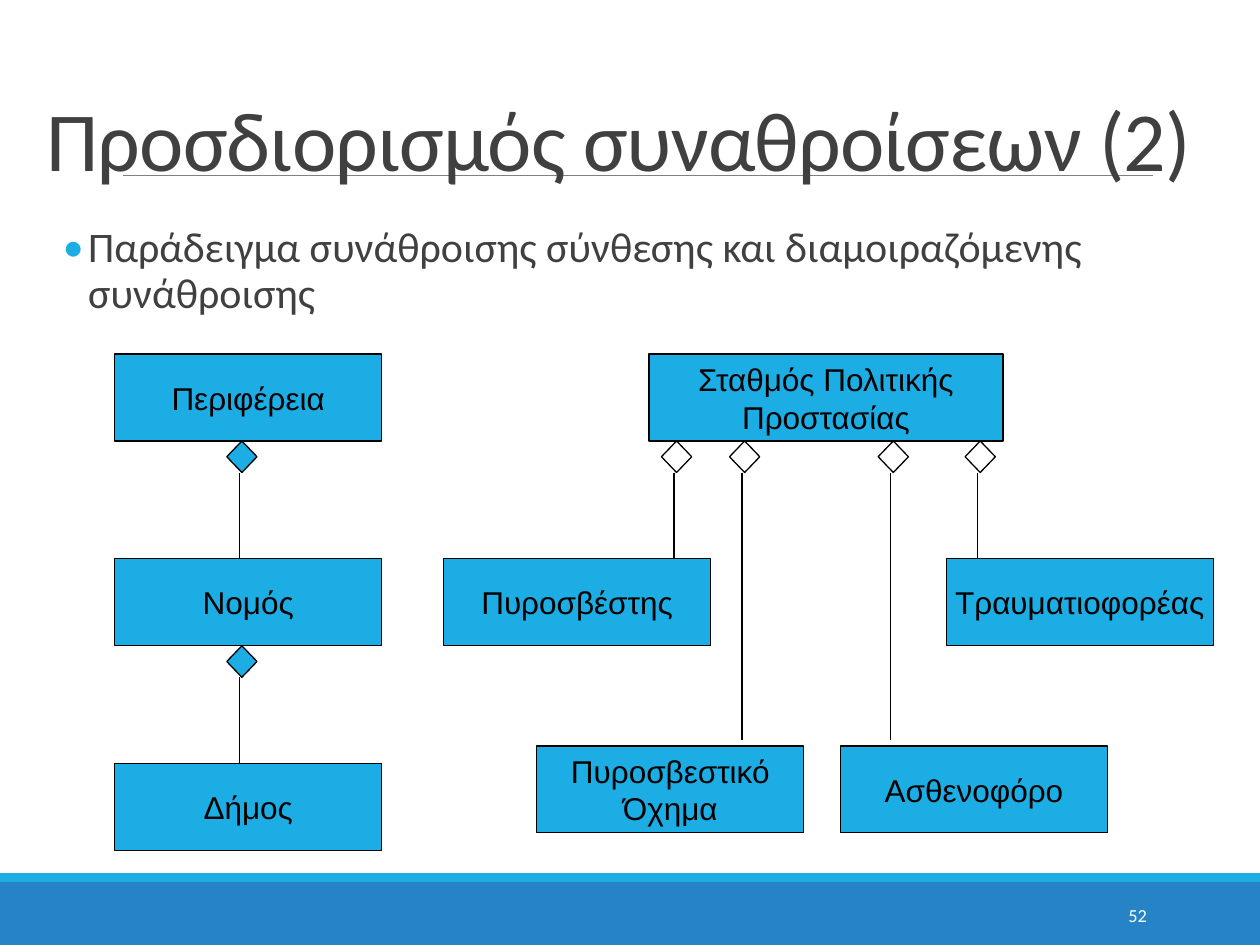
import dataclasses

import lxml.etree
import pptx
import pptx.dml.color
import pptx.enum.shapes
import pptx.enum.text
import pptx.oxml.ns
import pptx.util

Inches = pptx.util.Inches
SHAPES = pptx.enum.shapes.MSO_SHAPE
ALIGN = pptx.enum.text.PP_ALIGN
ANCHOR = pptx.enum.text.MSO_ANCHOR


@dataclasses.dataclass(frozen=True)
class Theme:
    accent: str = "1CADE4"
    band: str = "2683C6"
    ink: str = "404040"
    rule: str = "808080"
    black: str = "000000"
    white: str = "FFFFFF"
    text_font: str = "Calibri"
    diagram_font: str = "Arial"
    title_size: float = 48
    body_size: float = 24
    diagram_size: float = 18
    number_size: float = 10.5
    outline: float = 0.75
    hairline: float = 0.5


@dataclasses.dataclass(frozen=True)
class Box:
    left: float
    top: float
    width: float
    height: float

    def lengths(self):
        return [Inches(value) for value in dataclasses.astuple(self)]


THEME = Theme()
CLASS_WIDTH, CLASS_HEIGHT = 2.12, 0.69
ROW_PITCH = 1.625
DIAMOND_WIDTH, DIAMOND_HEIGHT = 0.24, 0.25
LINK_OFFSET = 0.1  # from a diamond's left edge to its line


def color(value):
    return pptx.dml.color.RGBColor.from_string(value)


def append_xml(parent, tag, **attributes):
    element = lxml.etree.SubElement(parent, pptx.oxml.ns.qn(tag), attributes)
    return element


def write(shape, text, font, size, ink, align=ALIGN.LEFT, anchor=ANCHOR.TOP, wrap=True):
    frame = shape.text_frame
    frame.text = text
    frame.word_wrap = wrap
    frame.vertical_anchor = anchor
    paragraph = frame.paragraphs[0]
    paragraph.alignment = align
    run = paragraph.runs[0]
    run.font.name = font
    run.font.size = pptx.util.Pt(size)
    run.font.color.rgb = color(ink)
    return paragraph


def add_figure(slide, kind, box, fill=None, line=None):
    shape = slide.shapes.add_shape(kind, *box.lengths())
    shape.shadow.inherit = False
    if fill:
        shape.fill.solid()
        shape.fill.fore_color.rgb = color(fill)
    else:
        shape.fill.background()
    if line:
        shape.line.color.rgb = color(line)
        shape.line.width = pptx.util.Pt(THEME.outline)
    else:
        shape.line.fill.background()
    return shape


def add_line(slide, start, end, ink=THEME.black, width=THEME.outline):
    connector = slide.shapes.add_connector(
        pptx.enum.shapes.MSO_CONNECTOR.STRAIGHT, *map(Inches, (*start, *end)))
    connector.line.color.rgb = color(ink)
    connector.line.width = pptx.util.Pt(width)
    append_xml(connector._element.spPr, "a:effectLst")


def add_class(slide, text, left, top, width=CLASS_WIDTH, wrap=False):
    shape = add_figure(slide, SHAPES.RECTANGLE, Box(left, top, width, CLASS_HEIGHT),
                       THEME.accent, THEME.black)
    write(shape, text, THEME.diagram_font, THEME.diagram_size, THEME.black,
          ALIGN.CENTER, ANCHOR.MIDDLE, wrap)


def add_aggregation(slide, left, top, bottom, fill=None):
    """Diamond below the whole, with a line down to the part."""
    add_figure(slide, SHAPES.DIAMOND, Box(left, top, DIAMOND_WIDTH, DIAMOND_HEIGHT),
               fill, THEME.black)
    x = left + LINK_OFFSET
    add_line(slide, (x, top + DIAMOND_HEIGHT), (x, bottom))


def build_footer(slide, box):
    stripe = 0.07
    add_figure(slide, SHAPES.RECTANGLE,
               Box(box.left, box.top + stripe, box.width, box.height - stripe), THEME.band)
    add_figure(slide, SHAPES.RECTANGLE,
               Box(box.left, box.top, box.width, stripe), THEME.accent)
    number_box = Box(box.left + 8.12, box.top + 0.13, 1.08, 0.4)
    write(slide.shapes.add_textbox(*number_box.lengths()), "52", THEME.text_font,
          THEME.number_size, THEME.white, ALIGN.RIGHT, ANCHOR.MIDDLE)


def build_title(slide, box):
    rule_y = box.top + 1.09
    add_line(slide, (box.left + 0.71, rule_y), (box.left + 8.88, rule_y),
             THEME.rule, THEME.hairline)
    paragraph = write(slide.shapes.add_textbox(*box.lengths()),
                      "Προσδιορισμός συναθροίσεων (2)", THEME.text_font,
                      THEME.title_size, THEME.ink, anchor=ANCHOR.BOTTOM)
    paragraph.line_spacing = 0.85
    paragraph.runs[0].font._element.set("spc", "-50")


def build_body(slide, box):
    shape = slide.shapes.add_textbox(*box.lengths())
    shape.text_frame.margin_left = shape.text_frame.margin_right = 0
    paragraph = write(shape, "Παράδειγμα συνάθροισης σύνθεσης και διαμοιραζόμενης συνάθροισης",
                      THEME.text_font, THEME.body_size, THEME.ink)
    paragraph.line_spacing = 0.9
    paragraph.space_before = pptx.util.Pt(12)
    paragraph.space_after = pptx.util.Pt(2)
    # Hanging bullet
    properties = paragraph._element.get_or_add_pPr()
    properties.set("marL", str(Inches(0.2)))
    properties.set("indent", str(Inches(-0.2)))
    append_xml(append_xml(properties, "a:buClr"), "a:srgbClr", val=THEME.accent)
    append_xml(properties, "a:buFont", typeface=THEME.text_font)
    append_xml(properties, "a:buChar", char="•")


def build_composition(slide, box):
    names = ("Περιφέρεια", "Νομός", "Δήμος")
    for row, name in enumerate(names):
        top = box.top + row * ROW_PITCH
        add_class(slide, name, box.left, top, box.width)
        if row < len(names) - 1:
            add_aggregation(slide, box.left + 0.89, top + CLASS_HEIGHT,
                            top + ROW_PITCH, THEME.accent)


def build_shared_aggregation(slide, box):
    middle = box.top + ROW_PITCH
    bottom = box.top + box.height - CLASS_HEIGHT
    # The whole
    add_class(slide, "Σταθμός Πολιτικής Προστασίας", box.left + 1.63, box.top, 2.81, True)
    # Parts: name, left edge, top edge, diamond's left edge, gap above, wrapping
    parts = (
        ("Πυροσβέστης", 0, middle, 1.73, 0, False),
        ("Πυροσβεστικό Όχημα", 0.74, bottom, 2.27, 0.05, True),
        ("Ασθενοφόρο", 3.15, bottom, 3.45, 0.05, False),
        ("Τραυματιοφορέας", box.width - CLASS_WIDTH, middle, 4.14, 0, False),
    )
    for name, left, top, diamond_left, gap, wrap in parts:
        add_class(slide, name, box.left + left, top, wrap=wrap)
        add_aggregation(slide, box.left + diamond_left, box.top + CLASS_HEIGHT, top - gap)


def main():
    presentation = pptx.Presentation()
    presentation.slide_width, presentation.slide_height = Inches(10), Inches(7.5)
    slide = presentation.slides.add_slide(presentation.slide_layouts[6])
    build_footer(slide, Box(0, 6.93, 10, 0.57))
    build_title(slide, Box(0.27, 0.3, 9.45, 1.25))
    build_body(slide, Box(0.5, 1.75, 9, 0.97))
    build_composition(slide, Box(0.91, 2.81, CLASS_WIDTH, 3.94))
    build_shared_aggregation(slide, Box(3.52, 2.81, 6.11, 3.8))
    presentation.save("out.pptx")


if __name__ == "__main__":
    main()
